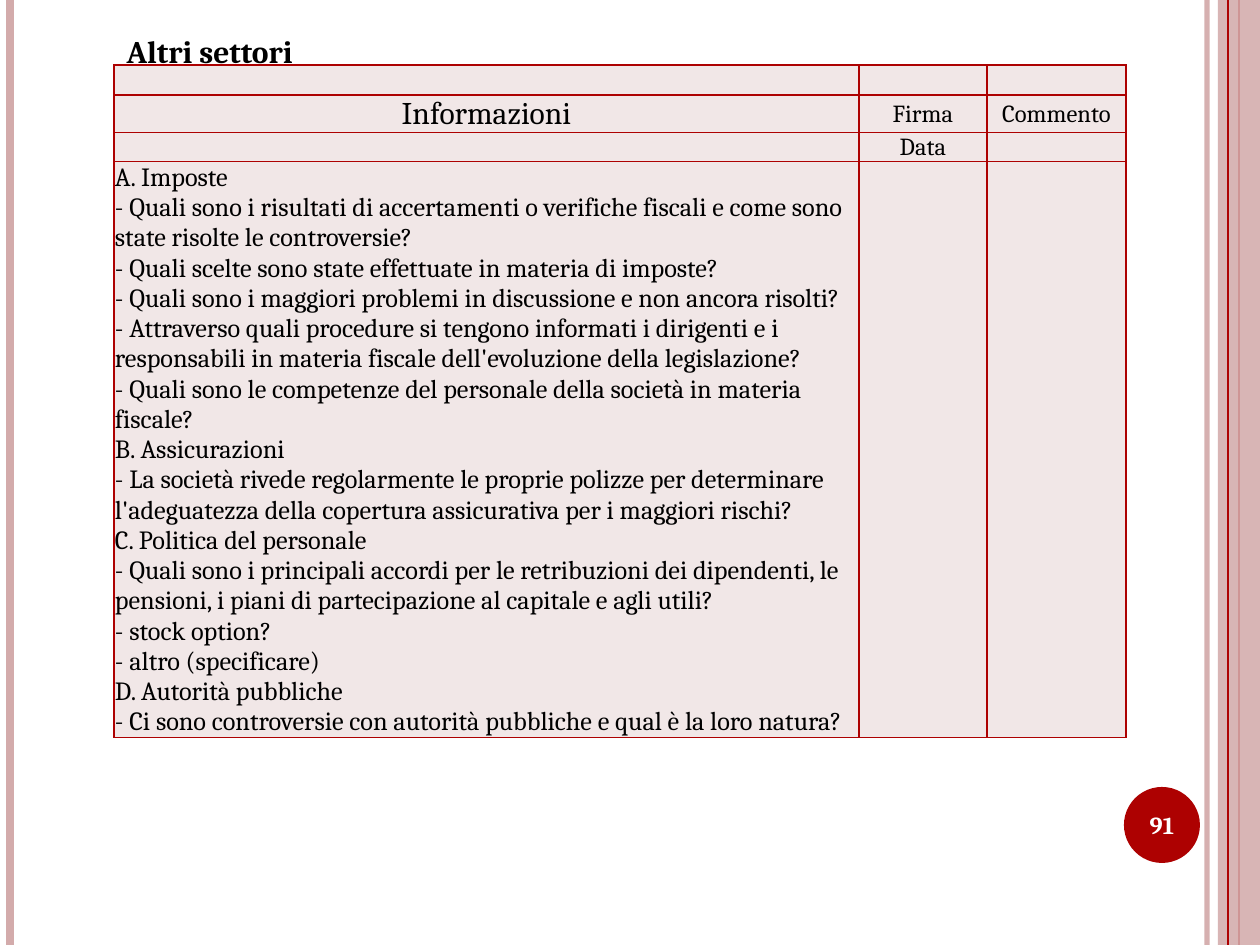
from lxml.etree import SubElement
from pptx import Presentation
from pptx.dml.color import RGBColor
from pptx.enum.shapes import MSO_CONNECTOR, MSO_SHAPE
from pptx.enum.text import MSO_ANCHOR, MSO_AUTO_SIZE, PP_ALIGN
from pptx.oxml.ns import qn
from pptx.util import Emu, Pt

PX = 914400 // 126
WIDTH, HEIGHT = 1260, 945
FONT = "Cambria"
RED, PINK, PALE, BLACK, WHITE = "AD0101", "D3ABAB", "F1E7E7", "000000", "FFFFFF"

TITLE = "Altri settori"
PAGE_NUMBER = "91"
QUESTIONS = [
    "A. Imposte",
    "- Quali sono i risultati di accertamenti o verifiche fiscali e come sono state risolte le controversie?",
    "- Quali scelte sono state effettuate in materia di imposte?",
    "- Quali sono i maggiori problemi in discussione e non ancora risolti?",
    "- Attraverso quali procedure si tengono informati i dirigenti e i responsabili in materia fiscale dell'evoluzione della legislazione?",
    "- Quali sono le competenze del personale della società in materia fiscale?",
    "B. Assicurazioni",
    "- La società rivede regolarmente le proprie polizze per determinare l'adeguatezza della copertura assicurativa per i maggiori rischi?",
    "C. Politica del personale",
    "- Quali sono i principali accordi per le retribuzioni dei dipendenti, le pensioni, i piani di partecipazione al capitale e agli utili?",
    "- stock option?",
    "- altro (specificare)",
    "D. Autorità pubbliche",
    "- Ci sono controversie con autorità pubbliche e qual è la loro natura?",
]
ROWS = [
    ["", "", ""],
    ["Informazioni", "Firma", "Commento"],
    ["", "Data", ""],
    ["\n".join(QUESTIONS), "", ""],
]
TABLE_LEFT, TABLE_TOP = 114, 65
COLUMN_WIDTHS = [745, 128, 139]
ROW_HEIGHTS = [30, 37, 29, 576]
TEXT_SIZES = {(1, 0): 18, (3, 0): 15}
LINES_BEHIND = [(1207, PINK, 3, 93), (10, PINK, 4.5, 100), (1239, RED, 1.5, 100)]
LINES_FRONT = [(1228, RED, 0.75, 100)]


def px(value):
    return Emu(value * PX)


def color(value):
    return RGBColor.from_string(value)


def set_alpha(fill_parent, percent):
    fill_color = next(fill_parent.iter(qn("a:srgbClr")))
    SubElement(fill_color, qn("a:alpha"), val=str(percent * 1000))


def style(paragraph, size, font_color=BLACK, bold=False, align=PP_ALIGN.LEFT):
    paragraph.alignment = align
    font = paragraph.font
    font.name, font.size, font.bold = FONT, Pt(size), bold
    font.color.rgb = color(font_color)


def add_line(slide, x, line_color, width, alpha):
    line = slide.shapes.add_connector(MSO_CONNECTOR.STRAIGHT, px(x), 0, px(x), px(HEIGHT))
    line.line.color.rgb = color(line_color)
    line.line.width = Pt(width)
    properties = line._element.spPr
    if alpha < 100:
        set_alpha(properties, alpha)
    SubElement(properties, qn("a:effectLst"))


def add_filled(slide, kind, left, top, width, height, fill):
    shape = slide.shapes.add_shape(kind, px(left), px(top), px(width), px(height))
    shape.shadow.inherit = False
    shape.fill.solid()
    shape.fill.fore_color.rgb = color(fill)
    shape.line.fill.background()
    return shape


def add_borders(cell):
    properties = cell._tc.get_or_add_tcPr()
    for index, side in enumerate(("a:lnL", "a:lnR", "a:lnT", "a:lnB")):
        border = properties.makeelement(qn(side), {"w": str(Pt(1))})
        solid = SubElement(border, qn("a:solidFill"))
        SubElement(solid, qn("a:srgbClr"), val=RED)
        properties.insert(index, border)


def fill_cell(cell, text, size, align):
    cell.fill.solid()
    cell.fill.fore_color.rgb = color(PALE)
    add_borders(cell)
    cell.vertical_anchor = MSO_ANCHOR.MIDDLE
    cell.margin_left = cell.margin_right = cell.margin_top = px(1)
    cell.margin_bottom = 0
    cell.text = text
    for paragraph in cell.text_frame.paragraphs:
        style(paragraph, size, align=align)
        if not text:
            SubElement(paragraph._p, qn("a:endParaRPr"), sz=str(size * 100))


def add_question_table(slide):
    table = slide.shapes.add_table(
        len(ROWS), len(COLUMN_WIDTHS), px(TABLE_LEFT), px(TABLE_TOP),
        px(sum(COLUMN_WIDTHS)), px(sum(ROW_HEIGHTS))).table
    table.first_row = table.horz_banding = False
    for column, width in zip(table.columns, COLUMN_WIDTHS):
        column.width = px(width)
    for row, height in zip(table.rows, ROW_HEIGHTS):
        row.height = px(height)
    for i, texts in enumerate(ROWS):
        align = PP_ALIGN.LEFT if i == len(ROWS) - 1 else PP_ALIGN.CENTER
        for j, text in enumerate(texts):
            fill_cell(table.cell(i, j), text, TEXT_SIZES.get((i, j), 14), align)


def add_title(slide):
    title = slide.shapes.title
    title.left, title.top, title.width, title.height = px(114), px(26), px(221), px(50)
    frame = title.text_frame
    frame.text = TITLE
    frame.word_wrap = False
    frame.auto_size = MSO_AUTO_SIZE.NONE
    frame.vertical_anchor = MSO_ANCHOR.TOP
    style(frame.paragraphs[0], 18, bold=True)


def add_page_number(slide):
    circle = add_filled(slide, MSO_SHAPE.OVAL, 1124, 787, 76, 76, RED)
    frame = circle.text_frame
    frame.text = PAGE_NUMBER
    frame.vertical_anchor = MSO_ANCHOR.MIDDLE
    style(frame.paragraphs[0], 14, WHITE, True, PP_ALIGN.CENTER)


def main():
    presentation = Presentation()
    presentation.slide_width, presentation.slide_height = px(WIDTH), px(HEIGHT)
    slide = presentation.slides.add_slide(presentation.slide_layouts[5])
    for line in LINES_BEHIND:
        add_line(slide, *line)
    band = add_filled(slide, MSO_SHAPE.RECTANGLE, 1218, 0, 42, HEIGHT, PINK)
    set_alpha(band._element.spPr, 87)
    for line in LINES_FRONT:
        add_line(slide, *line)
    add_page_number(slide)
    add_question_table(slide)
    add_title(slide)
    presentation.save("out.pptx")


if __name__ == "__main__":
    main()
